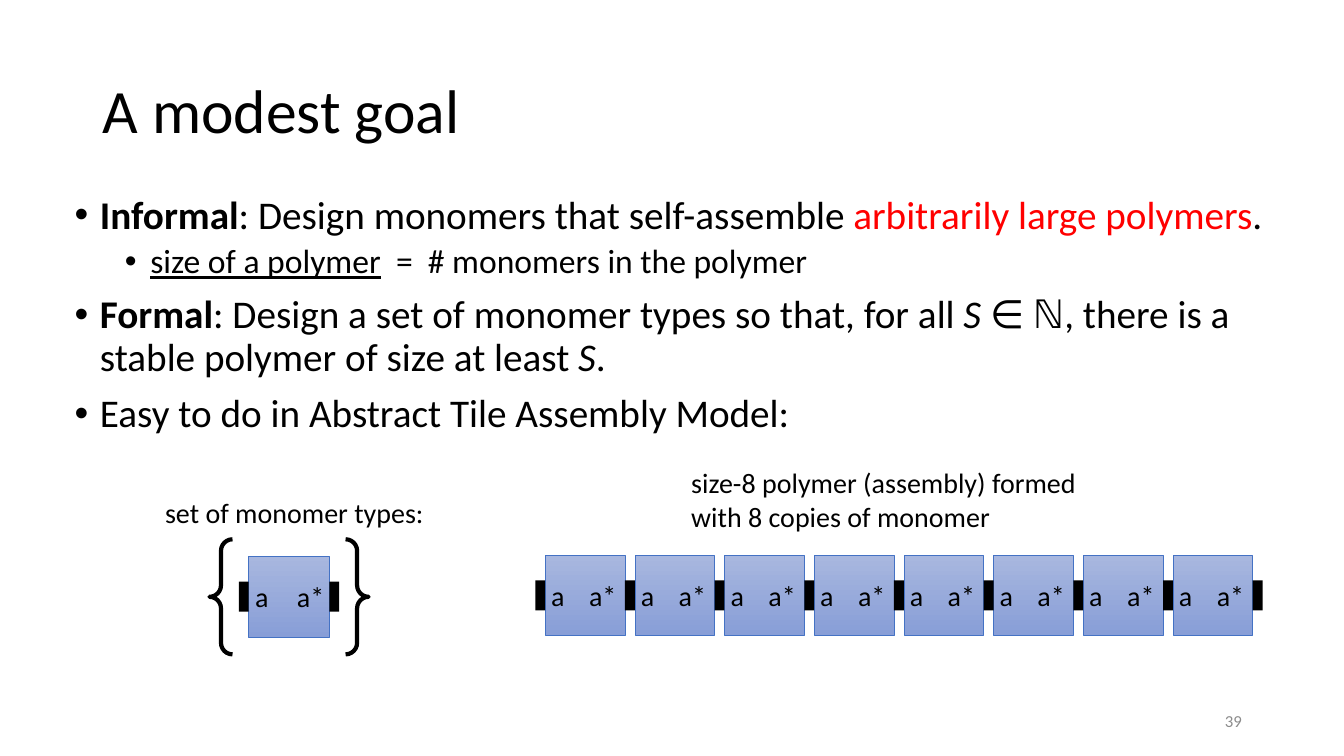
"""Build the slide that states the polymer goal and shows its tile assembly."""
from dataclasses import dataclass

from lxml import etree
from pptx import Presentation
from pptx import util as u
from pptx.dml import color
from pptx.enum import shapes, text
from pptx.oxml import ns
from pptx.shapes import autoshape, shapetree
from pptx.text import text as body_text

BLACK = color.RGBColor(0x00, 0x00, 0x00)
RED = color.RGBColor(0xFF, 0x00, 0x00)
GRAY = color.RGBColor(0x8C, 0x8C, 0x8C)
TILE_TOP = color.RGBColor(0xA8, 0xB7, 0xDF)
TILE_BOTTOM = color.RGBColor(0x88, 0x9E, 0xD7)
TILE_LINE = color.RGBColor(0x44, 0x72, 0xC4)
FONT = "Calibri"
GLUE_WIDTH = 0.25
GLUE_HEIGHT = 0.76
LABEL_HEIGHT = 0.86


@dataclass
class Box:
    left: float
    top: float
    width: float
    height: float

    def lengths(self) -> list[u.Length]:
        return [u.Cm(side) for side in (self.left, self.top, self.width, self.height)]


@dataclass
class Label:
    words: str
    box: Box
    size: int = 20
    ink: color.RGBColor = BLACK
    align: text.PP_ALIGN = text.PP_ALIGN.LEFT
    anchor: text.MSO_ANCHOR = text.MSO_ANCHOR.TOP
    wrap: bool = False
    margin: bool = True
    line_spacing: float = 1.0


@dataclass
class Span:
    words: str
    bold: bool = False
    italic: bool = False
    underline: bool = False
    ink: color.RGBColor = BLACK


@dataclass
class Bullet:
    spans: list[Span]
    level: int = 0
    size: int = 28
    space_before: int = 10


@dataclass
class Monomer:
    left: float
    top: float
    size: float
    a_width: float
    star_width: float


LABELS = [
    Label("A modest goal", Box(2.34, 1.02, 29.21, 3.68), 44,
          anchor=text.MSO_ANCHOR.MIDDLE, wrap=True, line_spacing=0.9),
    Label("39", Box(23.93, 17.65, 7.62, 1.02), 12, GRAY, text.PP_ALIGN.RIGHT,
          text.MSO_ANCHOR.MIDDLE, wrap=True),
    Label("set of monomer types:", Box(3.91, 12.37, 7.09, 1.12)),
    Label("size-8 polymer (assembly) formed\nwith 8 copies of monomer",
          Box(17.17, 11.61, 10.8, 1.96)),
]
BULLETS = [
    Bullet([Span("Informal", bold=True),
            Span(": Design monomers that self-assemble "),
            Span("arbitrarily large polymers", ink=RED), Span(".")]),
    Bullet([Span("size of a polymer", underline=True),
            Span("  =  # monomers in the polymer")], 1, 24, 5),
    Bullet([Span("Formal", bold=True),
            Span(": Design a set of monomer types so that, for all "),
            Span("S", italic=True),
            Span(" ∈ ℕ, there is a stable polymer of size at least "),
            Span("S", italic=True), Span(".")]),
    Bullet([Span("Easy to do in Abstract Tile Assembly Model:")]),
]
BODY = Box(1.63, 4.8, 30.61, 8.79)
BRACES = Box(5.28, 13.59, 4.01, 2.9)
TYPE_MONOMER = Monomer(6.27, 14.02, 2.03, 0.66, 0.94)
POLYMER_LEFT, POLYMER_TOP, POLYMER_TILE = 13.74, 14.0, 2.01
POLYMER = [
    Monomer(POLYMER_LEFT + index * (POLYMER_TILE + GLUE_WIDTH), POLYMER_TOP,
            POLYMER_TILE, 0.64, 1.12)
    for index in range(8)
]


def style_font(font: body_text.Font, size: int, ink: color.RGBColor) -> None:
    """Set the typeface, size and colour."""
    font.name = FONT
    font.size = u.Pt(size)
    font.color.rgb = ink


def add_label(tree: shapetree._BaseGroupShapes, label: Label) -> None:
    """Add a text box in one style."""
    frame = tree.add_textbox(*label.box.lengths()).text_frame
    frame.text = label.words
    frame.word_wrap = label.wrap
    frame.vertical_anchor = label.anchor
    if not label.wrap:
        frame.auto_size = text.MSO_AUTO_SIZE.SHAPE_TO_FIT_TEXT
    if not label.margin:
        frame.margin_left = frame.margin_right = u.Cm(0)
        frame.margin_top = frame.margin_bottom = u.Cm(0)
    for paragraph in frame.paragraphs:
        paragraph.alignment = label.align
        paragraph.line_spacing = label.line_spacing
        for run in paragraph.runs:
            style_font(run.font, label.size, label.ink)


def add_bullets(tree: shapetree._BaseGroupShapes, box: Box, bullets: list[Bullet]) -> None:
    """Add the bulleted body text."""
    frame = tree.add_textbox(*box.lengths()).text_frame
    frame.word_wrap = True
    for index, bullet in enumerate(bullets):
        paragraph = frame.add_paragraph() if index else frame.paragraphs[0]
        paragraph.level = bullet.level
        paragraph.line_spacing = 0.9
        paragraph.space_before = u.Pt(bullet.space_before)
        properties = paragraph._p.get_or_add_pPr()
        properties.set("marL", str(int(u.Cm(0.64 + 1.27 * bullet.level))))
        properties.set("indent", str(int(u.Cm(-0.64))))
        etree.SubElement(properties, ns.qn("a:buFont"), typeface="Arial")
        etree.SubElement(properties, ns.qn("a:buChar"), char="•")
        for span in bullet.spans:
            run = paragraph.add_run()
            run.text = span.words
            style_font(run.font, bullet.size, span.ink)
            run.font.bold = span.bold
            run.font.italic = span.italic
            run.font.underline = span.underline


def add_rectangle(tree: shapetree._BaseGroupShapes, box: Box) -> autoshape.Shape:
    """Add a rectangle without a shadow."""
    shape = tree.add_shape(shapes.MSO_SHAPE.RECTANGLE, *box.lengths())
    shape.shadow.inherit = False
    return shape


def add_glue(tree: shapetree._BaseGroupShapes, monomer: Monomer, left: float) -> None:
    """Add a black glue at mid-height of a monomer."""
    top = monomer.top + (monomer.size - GLUE_HEIGHT) / 2
    glue = add_rectangle(tree, Box(left, top, GLUE_WIDTH, GLUE_HEIGHT))
    glue.fill.solid()
    glue.fill.fore_color.rgb = BLACK
    glue.line.fill.background()


def add_chain(tree: shapetree._BaseGroupShapes, monomers: list[Monomer]) -> None:
    """Add a group of monomers with a glue on each side of every tile."""
    group = tree.add_group_shape().shapes
    for monomer in monomers:
        tile = add_rectangle(group, Box(monomer.left, monomer.top, monomer.size, monomer.size))
        tile.fill.gradient()
        tile.fill.gradient_angle = 270
        for stop, ink in zip(tile.fill.gradient_stops, (TILE_TOP, TILE_BOTTOM)):
            stop.color.rgb = ink
        tile.line.color.rgb = TILE_LINE
        tile.line.width = u.Pt(0.5)
        right = monomer.left + monomer.size
        top = monomer.top + (monomer.size - LABEL_HEIGHT) / 2
        for words, left, width in (("a", monomer.left, monomer.a_width),
                                   ("a*", right - monomer.star_width, monomer.star_width)):
            add_label(group, Label(words, Box(left, top, width, LABEL_HEIGHT),
                                   align=text.PP_ALIGN.CENTER, wrap=True, margin=False))
        add_glue(group, monomer, monomer.left - GLUE_WIDTH)
    add_glue(group, monomers[-1], monomers[-1].left + monomers[-1].size)


def main() -> None:
    """Build and save the presentation."""
    presentation = Presentation()
    presentation.slide_width, presentation.slide_height = u.Cm(33.87), u.Cm(19.05)
    slide = presentation.slides.add_slide(presentation.slide_layouts[6])
    for label in LABELS:
        add_label(slide.shapes, label)
    add_bullets(slide.shapes, BODY, BULLETS)
    braces = slide.shapes.add_shape(shapes.MSO_SHAPE.DOUBLE_BRACE, *BRACES.lengths())
    braces.shadow.inherit = False
    braces.adjustments[0] = 0.1
    braces.fill.background()
    braces.line.color.rgb = BLACK
    braces.line.width = u.Pt(3)
    add_chain(slide.shapes, [TYPE_MONOMER])
    add_chain(slide.shapes, POLYMER)
    presentation.save("out.pptx")


if __name__ == "__main__":
    main()
